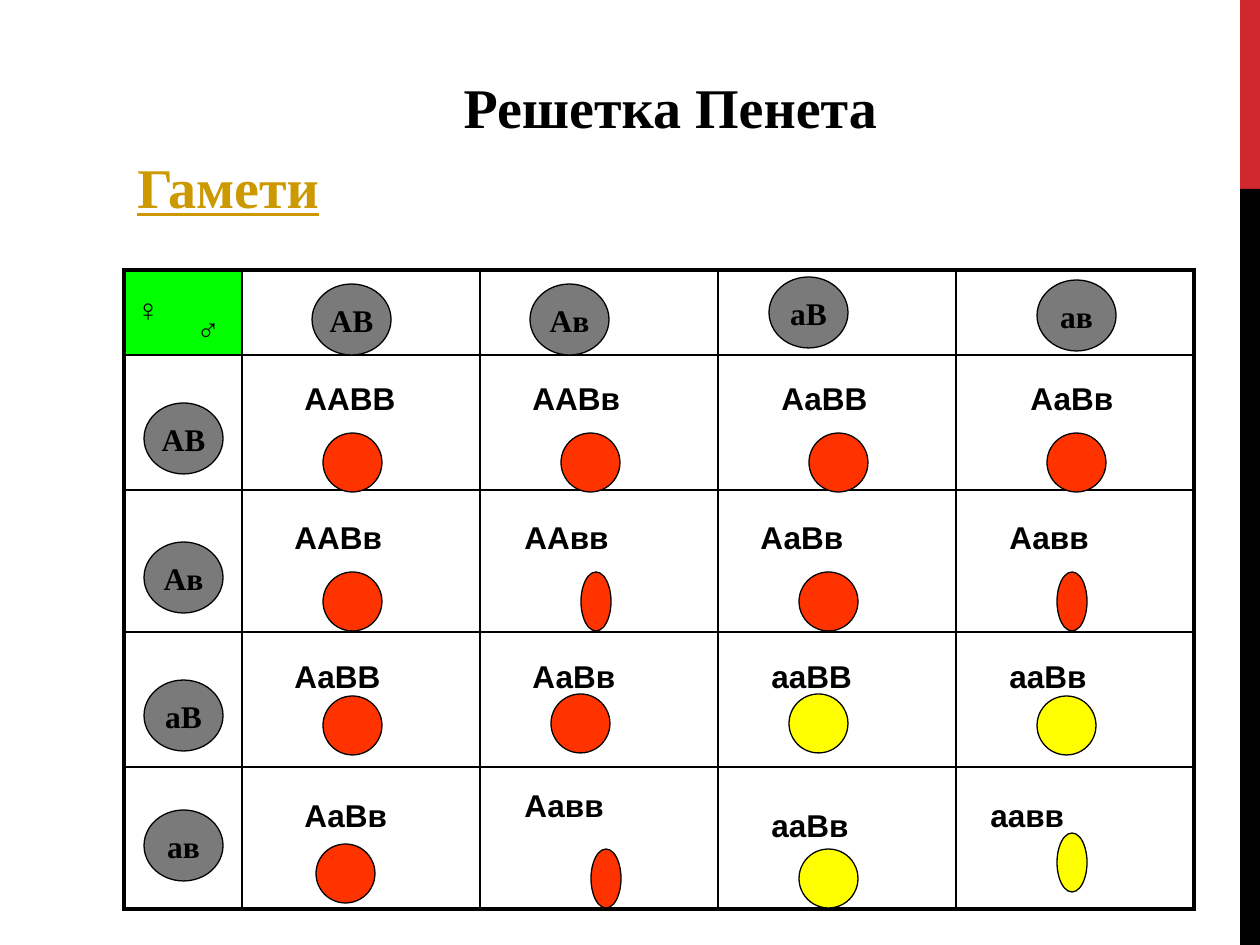
from lxml.etree import SubElement
from pptx import Presentation
from pptx.dml.color import RGBColor
from pptx.enum.shapes import MSO_SHAPE
from pptx.enum.text import MSO_ANCHOR, MSO_AUTO_SIZE, PP_ALIGN
from pptx.oxml.ns import qn
from pptx.util import Emu, Pt

PX = 914400 / 126
BLACK = RGBColor(0x00, 0x00, 0x00)
CRIMSON = RGBColor(0xD1, 0x28, 0x2E)
GREEN = RGBColor(0x00, 0xFF, 0x00)
GRAY = RGBColor(0x7A, 0x7A, 0x7A)
RED = RGBColor(0xFF, 0x33, 0x00)
YELLOW = RGBColor(0xFF, 0xFF, 0x00)
GOLD = RGBColor(0xCC, 0x99, 0x00)
SERIF, SANS = "Times New Roman", "Arial"

GAMETES = ["АВ", "Ав", "аВ", "ав"]
FATHER_SPOTS = [(312, 284), (530, 284), (769, 277), (1037, 280)]
MOTHER_SPOTS = [(144, 403), (144, 542), (144, 680), (144, 810)]
COLUMNS = [118] + [238] * 4
ROWS = [85, 135, 142, 135, 142]
LABEL_SPOTS = [
    [(292, 373), (520, 373), (769, 373), (1018, 373)],
    [(282, 512), (512, 512), (748, 512), (997, 512)],
    [(282, 651), (520, 651), (759, 651), (997, 651)],
    [(292, 790), (512, 780), (759, 800), (978, 790)],
]
PEA_SPOTS = [
    [(323, 433), (561, 433), (809, 433), (1047, 433)],
    [(323, 572), (581, 572), (799, 572), (1057, 572)],
    [(323, 696), (551, 694), (789, 694), (1037, 696)],
    [(316, 844), (591, 849), (799, 849), (1057, 833)],
]


def px(length):
    return Emu(round(length * PX))


def box(*lengths):
    return [px(length) for length in lengths]


def write(holder, text, font, size, color=BLACK, bold=True, underline=None):
    frame = holder.text_frame
    frame.text = text
    frame.word_wrap = False
    style = frame.paragraphs[0].runs[0].font
    style.name, style.size = font, Pt(size)
    style.bold, style.underline = bold, underline
    style.color.rgb = color


def add_label(slide, text, area, font=SANS, size=18, **style):
    label = slide.shapes.add_textbox(*box(*area))
    write(label, text, font, size, **style)
    label.text_frame.auto_size = MSO_AUTO_SIZE.SHAPE_TO_FIT_TEXT


def add_solid(slide, preset, area, color, outlined=True):
    solid = slide.shapes.add_shape(preset, *box(*area))
    solid.shadow.inherit = False
    solid.fill.solid()
    solid.fill.fore_color.rgb = color
    if outlined:
        solid.line.color.rgb = BLACK
        solid.line.width = Pt(0.75)
    else:
        solid.line.fill.background()
    return solid


def add_title(slide, text):
    title = slide.shapes.title
    title.left, title.top, title.width, title.height = box(451, 66, 444, 81)
    write(title, text, SERIF, 32)
    title.text_frame.auto_size = MSO_AUTO_SIZE.SHAPE_TO_FIT_TEXT
    title.text_frame.vertical_anchor = MSO_ANCHOR.TOP
    title.text_frame.paragraphs[0].alignment = PP_ALIGN.LEFT


def add_gamete(slide, alleles, spot):
    gamete = add_solid(slide, MSO_SHAPE.OVAL, (*spot, 79, 71), GRAY)
    write(gamete, alleles, SERIF, 18)
    gamete.text_frame.vertical_anchor = MSO_ANCHOR.MIDDLE
    gamete.text_frame.paragraphs[0].alignment = PP_ALIGN.CENTER


def set_border(cell, side, points):
    line = SubElement(cell._tc.get_or_add_tcPr(), qn(f"a:ln{side}"), w=str(Pt(points)))
    fill = SubElement(line, qn("a:solidFill"))
    SubElement(fill, qn("a:srgbClr"), val=str(BLACK))


def add_grid(slide):
    area = box(124, 270, sum(COLUMNS), sum(ROWS))
    grid = slide.shapes.add_table(len(ROWS), len(COLUMNS), *area).table
    grid.first_row = grid.horz_banding = False
    for column, width in zip(grid.columns, COLUMNS):
        column.width = px(width)
    last_row, last_column = len(ROWS) - 1, len(COLUMNS) - 1
    for r, height in enumerate(ROWS):
        grid.rows[r].height = px(height)
        for c in range(len(COLUMNS)):
            cell = grid.cell(r, c)
            outer = {"L": c == 0, "R": c == last_column, "T": r == 0, "B": r == last_row}
            for side, is_outer in outer.items():
                set_border(cell, side, 2.25 if is_outer else 1)
            cell.fill.background()
    corner = grid.cell(0, 0)
    corner.fill.solid()
    corner.fill.fore_color.rgb = GREEN


def cross(mother, father):
    return "".join("".join(sorted(pair)) for pair in zip(mother, father))


def add_offspring(slide, genotype, label_spot, pea_spot):
    pea_width = 59 if "В" in genotype else 30
    pea_color = RED if "А" in genotype else YELLOW
    add_solid(slide, MSO_SHAPE.OVAL, (*pea_spot, pea_width, 59), pea_color)
    label_width = 147 - 5 * genotype.count("в") - 7 * genotype.count("а")
    add_label(slide, genotype, (*label_spot, label_width, 63))


def main():
    deck = Presentation()
    deck.slide_width, deck.slide_height = box(1260, 945)
    slide = deck.slides.add_slide(deck.slide_layouts[5])

    add_solid(slide, MSO_SHAPE.RECTANGLE, (1240, 0, 20, 189), CRIMSON, outlined=False)
    add_solid(slide, MSO_SHAPE.RECTANGLE, (1240, 189, 20, 756), BLACK, outlined=False)
    add_title(slide, "Решетка Пенета")
    add_label(slide, "Гамети", (125, 146, 209, 81), SERIF, 32, color=GOLD, underline=True)

    add_grid(slide)
    add_label(slide, "♀", (124, 284, 57, 63), bold=False)
    add_label(slide, "♂", (184, 304, 57, 63), bold=False)
    for spots in (FATHER_SPOTS, MOTHER_SPOTS):
        for alleles, spot in zip(GAMETES, spots):
            add_gamete(slide, alleles, spot)
    for mother, label_row, pea_row in zip(GAMETES, LABEL_SPOTS, PEA_SPOTS):
        for father, label_spot, pea_spot in zip(GAMETES, label_row, pea_row):
            add_offspring(slide, cross(mother, father), label_spot, pea_spot)

    deck.save("out.pptx")


if __name__ == "__main__":
    main()
